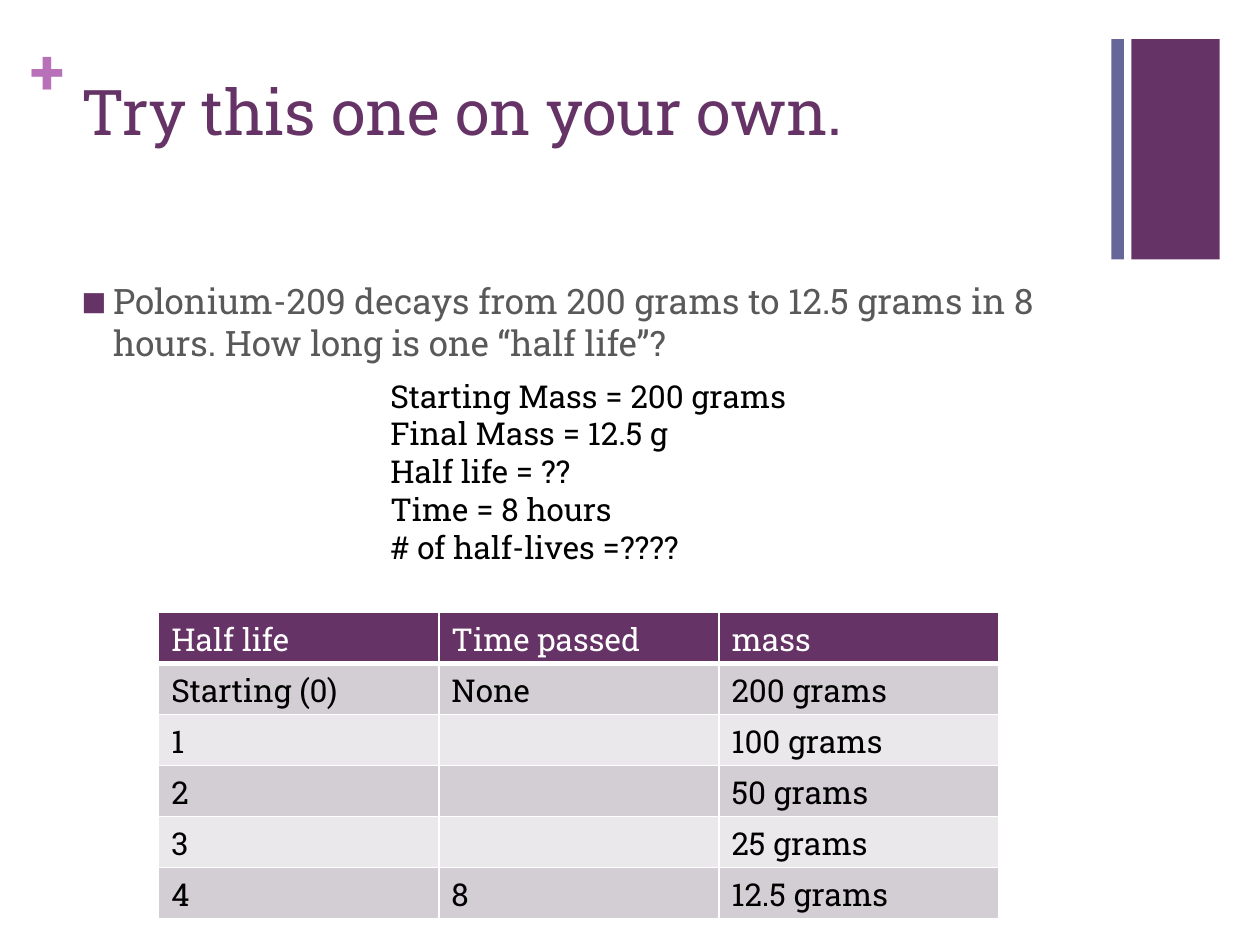
from dataclasses import dataclass

import lxml.etree
import pptx
import pptx.dml.color
import pptx.enum.shapes
import pptx.enum.text
import pptx.oxml.ns
import pptx.util
from pptx.util import Inches

FONT = "Roboto Slab"
COLORS = {
    "purple": "663366",
    "slate": "666699",
    "orchid": "B870B8",
    "gray": "595959",
    "black": "000000",
    "white": "FFFFFF",
    "dark band": "D3CED3",
    "light band": "EAE8EA",
}


@dataclass
class Bar:
    left: float
    width: float
    color: str


BARS = [Bar(8.98, 0.7, "purple"), Bar(8.82, 0.1, "slate")]
KNOWN_FACTS = [
    "Starting Mass = 200 grams",
    "Final Mass = 12.5 g",
    "Half life = ??",
    "Time = 8 hours",
    "# of half-lives =????",
]
DECAY_ROWS = [
    ("Half life", "Time passed", "mass"),
    ("Starting (0)", "None", "200 grams"),
    ("1", "", "100 grams"),
    ("2", "", "50 grams"),
    ("3", "", "25 grams"),
    ("4", "8", "12.5 grams"),
]


def rgb(name: str) -> pptx.dml.color.RGBColor:
    return pptx.dml.color.RGBColor.from_string(COLORS[name])


def add_element(parent, tag: str, **attributes: str):
    element = lxml.etree.SubElement(parent, pptx.oxml.ns.qn(tag))
    for key, value in attributes.items():
        element.set(key, value)
    return element


def write_text(para, text: str, *, size: float = 18, color: str = "black",
               bold: bool = False) -> None:
    span = para.add_run()
    span.text = text
    span.font.name = FONT
    span.font.size = pptx.util.Pt(size)
    span.font.bold = bold
    span.font.color.rgb = rgb(color)


def add_text_box(slide, left: float, top: float, width: float, height: float,
                 lines: list[str], *, margin: float | None = None, **style):
    box = slide.shapes.add_textbox(Inches(left), Inches(top), Inches(width), Inches(height))
    frame = box.text_frame
    frame.word_wrap = True
    if margin is not None:
        frame.margin_left = frame.margin_right = Inches(margin)
        frame.margin_top = frame.margin_bottom = Inches(margin)
    for index, line in enumerate(lines):
        para = frame.add_paragraph() if index else frame.paragraphs[0]
        write_text(para, line, **style)
    return box


def indent(para, left: float, first_line: float = 0) -> None:
    properties = para._p.get_or_add_pPr()
    properties.set("marL", str(Inches(left)))
    properties.set("indent", str(Inches(first_line)))


def add_square_bullet(para) -> None:
    properties = para._p.get_or_add_pPr()
    bullet_color = add_element(properties, "a:buClr")
    add_element(bullet_color, "a:srgbClr", val=COLORS["purple"])
    add_element(properties, "a:buSzPct", val="75000")
    add_element(properties, "a:buFont", typeface=FONT)
    add_element(properties, "a:buChar", char="■")


def add_bar(slide, bar: Bar) -> None:
    shape = slide.shapes.add_shape(
        pptx.enum.shapes.MSO_SHAPE.RECTANGLE,
        Inches(bar.left), Inches(0.31), Inches(bar.width), Inches(1.75))
    shape.shadow.inherit = False
    shape.fill.solid()
    shape.fill.fore_color.rgb = rgb(bar.color)
    shape.line.fill.background()


def set_borders(cell, bottom_width: float) -> None:
    """Draw white borders; they must precede the cell fill in the XML."""
    properties = cell._tc.get_or_add_tcPr()
    for side in ("L", "R", "T", "B"):
        width = bottom_width if side == "B" else 1
        line = add_element(properties, f"a:ln{side}", w=str(pptx.util.Pt(width)))
        fill = add_element(line, "a:solidFill")
        add_element(fill, "a:srgbClr", val=COLORS["white"])


def add_decay_table(slide) -> None:
    row_count, column_count = len(DECAY_ROWS), len(DECAY_ROWS[0])
    table = slide.shapes.add_table(
        row_count, column_count, Inches(1.26), Inches(4.86),
        Inches(6.67), Inches(2.43)).table
    for row, texts in enumerate(DECAY_ROWS):
        is_header = row == 0
        band = "purple" if is_header else "dark band" if row % 2 else "light band"
        for column, text in enumerate(texts):
            cell = table.cell(row, column)
            set_borders(cell, bottom_width=3 if is_header else 1)
            cell.fill.solid()
            cell.fill.fore_color.rgb = rgb(band)
            para = cell.text_frame.paragraphs[0]
            if text:
                write_text(para, text, color="white" if is_header else "black")
            else:
                para.font.size = pptx.util.Pt(18)


def main() -> None:
    deck = pptx.Presentation()
    deck.slide_width, deck.slide_height = Inches(10), Inches(7.5)
    slide = deck.slides.add_slide(deck.slide_layouts[6])

    for bar in BARS:
        add_bar(slide, bar)
    add_text_box(slide, 0.24, 0.25, 0.29, 0.61, ["+"],
                 margin=0, size=36, color="orchid", bold=True)
    add_text_box(slide, 0.55, 0.53, 8.26, 1.22, ["Try this one on your own."],
                 size=36, color="purple")

    question = add_text_box(
        slide, 0.55, 2.17, 8.26, 4.53,
        ["Polonium-209 decays from 200 grams to 12.5 grams in 8 hours. "
         "How long is one “half life”?"],
        size=20, color="gray")
    question_para = question.text_frame.paragraphs[0]
    question_para.space_before = pptx.util.Pt(20)
    indent(question_para, 0.25, -0.25)
    add_square_bullet(question_para)

    add_decay_table(slide)

    facts = add_text_box(slide, 2.5, 2.94, 5, 1.62, KNOWN_FACTS)
    facts.text_frame.auto_size = pptx.enum.text.MSO_AUTO_SIZE.SHAPE_TO_FIT_TEXT
    for para in facts.text_frame.paragraphs:
        para.level = 1
        indent(para, 0.5)

    deck.save("out.pptx")


if __name__ == "__main__":
    main()
